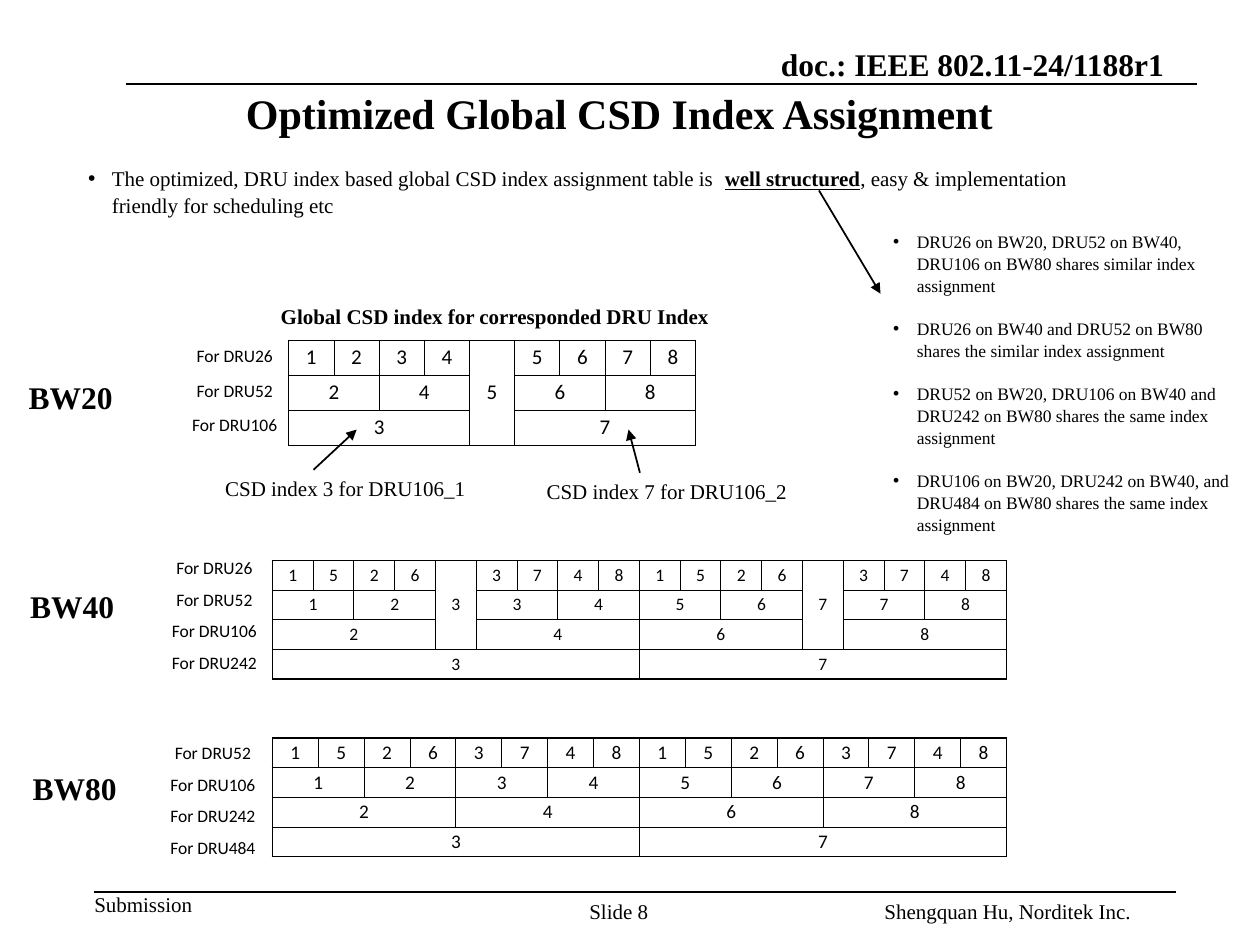
import lxml.etree
import pptx
import pptx.dml.color
import pptx.enum.shapes
import pptx.enum.text
import pptx.oxml.ns
import pptx.util

Cm, Pt = pptx.util.Cm, pptx.util.Pt
ALIGN = pptx.enum.text.PP_ALIGN
ANCHOR = pptx.enum.text.MSO_ANCHOR
BLACK = pptx.dml.color.RGBColor(0, 0, 0)
SERIF, SANS = "Times New Roman", "Calibri"
qn = pptx.oxml.ns.qn


def style(para, size, bold=False, face=SERIF, align=ALIGN.LEFT):
    para.alignment = align
    font = para.font
    font.size, font.bold, font.name = Pt(size), bold, face
    font.color.rgb = BLACK


def edge(cell, sides):
    """Draw the cell's borders; sides maps L, R, T, B to points, 0 for none."""
    props = cell._tc.get_or_add_tcPr()
    for spot, (side, width) in enumerate(sides.items()):
        line = lxml.etree.Element(qn(f"a:ln{side}"), w=str(Pt(width)))
        if width:
            fill = lxml.etree.SubElement(line, qn("a:solidFill"))
            lxml.etree.SubElement(fill, qn("a:srgbClr"), val=str(BLACK))
        else:
            lxml.etree.SubElement(line, qn("a:noFill"))
        props.insert(spot, line)


deck = pptx.Presentation()
deck.slide_width, deck.slide_height = Cm(25.4), Cm(19.05)
slide = deck.slides.add_slide(deck.slide_layouts[3])
shapes = slide.shapes
title, main, side = list(slide.placeholders)[:3]

# Title and the two bullet lists
for holder, left, top, width, height in (
    (title, 1.07, 1.85, 22.83, 0.86),
    (main, 1.52, 3.18, 21.56, 1.27),
    (side, 17.75, 4.5, 7.42, 6.25),
):
    holder.left, holder.top = Cm(left), Cm(top)
    holder.width, holder.height = Cm(width), Cm(height)
    holder.text_frame.auto_size = pptx.enum.text.MSO_AUTO_SIZE.NONE

title.text_frame.text = "Optimized Global CSD Index Assignment"
title.text_frame.vertical_anchor = ANCHOR.MIDDLE
style(title.text_frame.paragraphs[0], 24, True, align=ALIGN.CENTER)

para = main.text_frame.paragraphs[0]
para.add_run().text = "The optimized, DRU index based global CSD index assignment table is  "
key = para.add_run()
key.text = "well structured"
key.font.bold = key.font.underline = True
para.add_run().text = ", easy & implementation friendly for scheduling etc"

side.text_frame.text = "\n".join((
    "DRU26 on BW20, DRU52 on BW40, DRU106 on BW80 shares similar index assignment",
    "DRU26 on BW40 and DRU52 on BW80 shares the similar index assignment",
    "DRU52 on BW20, DRU106 on BW40 and DRU242 on BW80 shares the same index assignment",
    "DRU106 on BW20, DRU242 on BW40, and DRU484 on BW80 shares the same index assignment",
))
for holder, size, pitch, gap in ((main, 12, 1.07, 0), (side, 10, 1.05, 12)):
    for para in holder.text_frame.paragraphs:
        style(para, size)
        para.line_spacing = pitch
        para.space_before, para.space_after = Pt(0), Pt(gap)
        props = para._p.get_or_add_pPr()
        props.set("marL", str(Cm(0.48)))
        props.set("indent", str(Cm(-0.48)))

# Header, footer, captions and band names
for text, left, top, width, height, size, bold, inset in (
    ("doc.: IEEE 802.11-24/1188r1", 14.38, 0.91, 9.09, 0.76, 18, True, False),
    ("Submission", 1.9, 17.98, 1.98, 0.51, 12, False, False),
    ("Shengquan Hu, Norditek Inc.", 17.58, 17.98, 6.17, 0.6, 12, False, True),
    ("Slide 8", 11.63, 17.98, 2.11, 0.64, 12, False, True),
    ("Global CSD index for corresponded DRU Index", 5.41, 5.99, 9.22, 0.76, 12, True, True),
    ("CSD index 3 for DRU106_1", 4.29, 9.47, 5.41, 0.76, 12, False, True),
    ("CSD index 7 for DRU106_2", 10.77, 9.53, 5.41, 0.76, 12, False, True),
    ("BW20", 0.33, 7.49, 2.24, 1.02, 18, True, True),
    ("BW40", 0.36, 11.71, 2.24, 1.02, 18, True, True),
    ("BW80", 0.41, 15.37, 2.24, 1.02, 18, True, True),
):
    box = shapes.add_textbox(Cm(left), Cm(top), Cm(width), Cm(height))
    frame = box.text_frame
    frame.text = text
    frame.word_wrap = inset and size == 12
    if not inset:
        frame.margin_left = frame.margin_right = 0
        frame.margin_top = frame.margin_bottom = 0
    style(frame.paragraphs[0], size, bold)
    if text.startswith("doc."):
        frame.vertical_anchor = ANCHOR.BOTTOM
        frame.paragraphs[0].alignment = ALIGN.RIGHT

# Index tables and their row labels: each row is (span, values);
# a tall cell fills its column through the first three rows
for left, top, width, height, count, size, rim, tall, rows in (
    (5.82, 6.86, 8.2, 2.11, 9, 12, 0.5, {4: "5"},
     ((1, "12345678"), (2, "2468"), (4, "37"))),
    (5.49, 11.3, 14.81, 2.39, 18, 10, 1, {4: "3", 13: "7"},
     ((1, "1526374815263748"), (2, "12345678"), (4, "2468"), (9, "37"))),
    (5.49, 14.88, 14.81, 2.39, 16, 11, 1, {},
     ((1, "1526374815263748"), (2, "12345678"), (4, "2468"), (8, "37"))),
    (3.23, 6.83, 3, 2.11, 1, 10, 0, {},
     [(1, [f"For DRU{n}"]) for n in (26, 52, 106)]),
    (2.82, 11.15, 3, 2.54, 1, 10, 0, {},
     [(1, [f"For DRU{n}"]) for n in (26, 52, 106, 242)]),
    (2.79, 14.88, 3, 2.54, 1, 10, 0, {},
     [(1, [f"For DRU{n}"]) for n in (52, 106, 242, 484)]),
):
    table = shapes.add_table(len(rows), count, Cm(left), Cm(top), Cm(width), Cm(height)).table
    table.first_row = table.horz_banding = False
    blocks = [(0, col, 3, 1, text) for col, text in tall.items()]
    for row, (span, values) in enumerate(rows):
        col = 0
        for text in values:
            if row < 3 and col in tall:
                col += 1
            blocks.append((row, col, 1, span, text))
            col += span
    thin = min(rim, 0.5)
    for row, col, high, wide, text in blocks:
        sides = {
            "L": rim if col == 0 else thin,
            "R": rim if col + wide == count else thin,
            "T": rim if row == 0 else thin,
            "B": rim if row + high == len(rows) else thin,
        }
        first = table.cell(row, col)
        first.text = text
        for r in range(row, row + high):
            for c in range(col, col + wide):
                cell = table.cell(r, c)
                cell.margin_left = cell.margin_right = 0
                cell.margin_top = cell.margin_bottom = 0
                cell.vertical_anchor = ANCHOR.MIDDLE
                cell.fill.background()
                style(cell.text_frame.paragraphs[0], size, face=SANS, align=ALIGN.CENTER)
                edge(cell, sides)
        if high * wide > 1:
            first.merge(table.cell(row + high - 1, col + wide - 1))

# Rules and arrows
for x1, y1, x2, y2, arrow in (
    (2.54, 1.7, 24.13, 1.7, False),
    (1.9, 17.98, 23.7, 17.98, False),
    (6.32, 9.47, 7.19, 8.66, True),
    (12.9, 9.53, 12.67, 8.66, True),
    (16.51, 3.84, 17.75, 5.92, True),
):
    rule = shapes.add_connector(
        pptx.enum.shapes.MSO_CONNECTOR.STRAIGHT, Cm(x1), Cm(y1), Cm(x2), Cm(y2))
    rule.line.color.rgb, rule.line.width = BLACK, Pt(1)
    if arrow:
        lxml.etree.SubElement(rule.line._get_or_add_ln(), qn("a:tailEnd"), type="triangle")
    lxml.etree.SubElement(rule._element.spPr, qn("a:effectLst"))

deck.save("out.pptx")
